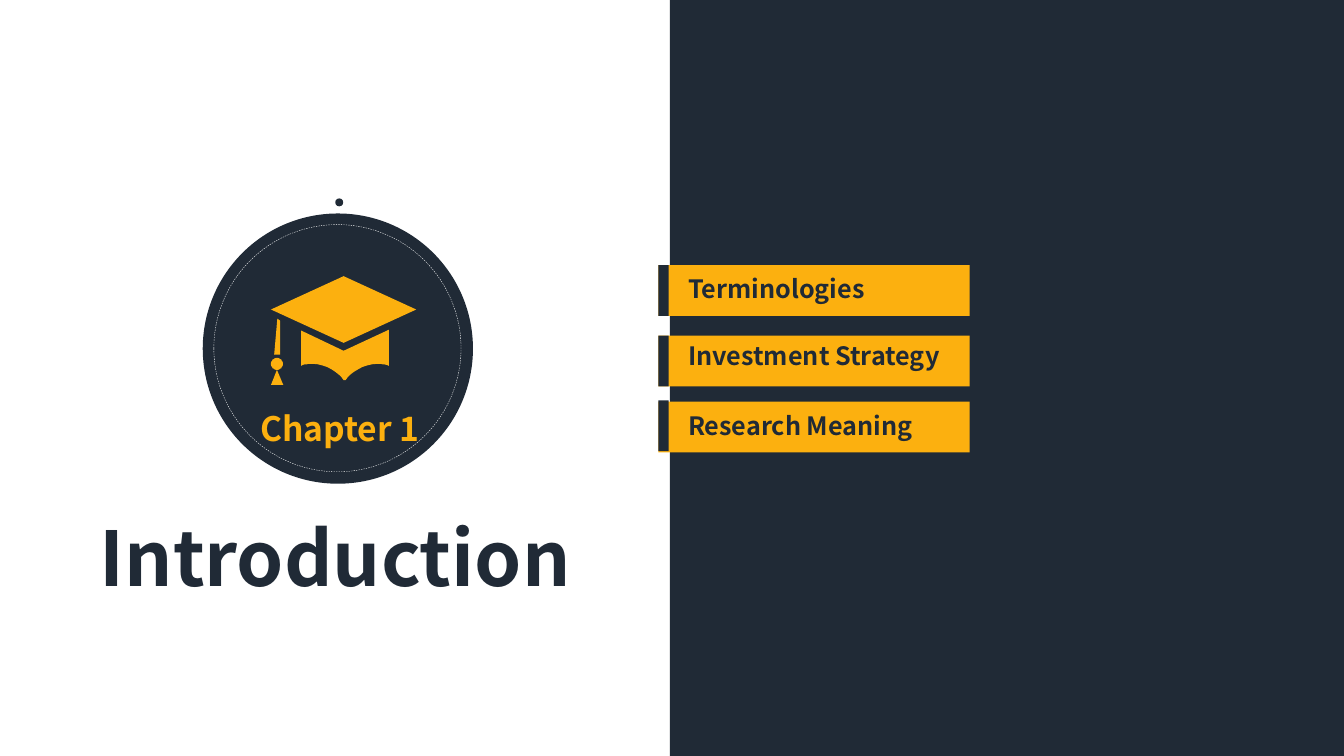
import math

from pptx import Presentation
from pptx import util as u
from pptx.dml.color import RGBColor
from pptx.enum import dml, shapes, text

NAVY = RGBColor(0x20, 0x2A, 0x36)
AMBER = RGBColor(0xFC, 0xB0, 0x0F)
WHITE = RGBColor(0xFF, 0xFF, 0xFF)
FONT = "Noto Sans CJK SC"

# All lengths are in centimetres.
TITLE = "Introduction"
CHAPTER = "Chapter 1"
# wording, bar top, tab top, text top, text width
TOPICS = [
    ("Terminologies", 6.68, 6.68, 6.76, 5.08),
    ("Investment Strategy", 8.46, 8.46, 8.46, 7.06),
    ("Research Meaning", 10.12, 10.09, 10.21, 6.43),
]
TAB_LEFT, TAB_WIDTH, BAR_WIDTH, BAR_HEIGHT = 16.59, 0.26, 7.85, 1.28

# Graduation cap
BOARD = [(8.66, 6.96), (6.83, 7.80), (8.66, 8.64), (10.49, 7.80)]
CORD = [(6.99, 8.03), (6.91, 8.94), (7.06, 8.94), (7.06, 8.08)]
TASSEL = [(6.98, 9.32), (6.83, 9.70), (7.14, 9.70)]
KNOB_CENTRE, KNOB_RADIUS = (6.98, 9.17), 0.15
BASE_TOP = [(9.80, 8.31), (8.66, 8.84), (7.59, 8.33)]
BASE_CURVES = [
    [(7.59, 9.22), (7.67, 9.17), (7.77, 9.17), (7.90, 9.17)],
    [(7.90, 9.17), (8.20, 9.17), (8.56, 9.40), (8.66, 9.58)],
    [(8.71, 9.58), (8.81, 9.40), (9.17, 9.17), (9.50, 9.17)],
    [(9.50, 9.17), (9.58, 9.17), (9.70, 9.17), (9.80, 9.22)],
]


def place(left, top, width, height):
    return [u.Cm(value) for value in (left, top, width, height)]


def add_shape(page, kind, area, fill=None):
    shape = page.shapes.add_shape(kind, *place(*area))
    shape.shadow.inherit = False
    shape.line.fill.background()
    if fill is None:
        shape.fill.background()
    else:
        shape.fill.solid()
        shape.fill.fore_color.rgb = fill
    return shape


def add_label(page, wording, area, size, color, align, wrap=False,
              anchor=text.MSO_ANCHOR.TOP):
    box = page.shapes.add_textbox(*place(*area))
    frame = box.text_frame
    frame.word_wrap = wrap
    frame.vertical_anchor = anchor
    para = frame.paragraphs[0]
    para.alignment = align
    span = para.add_run()
    span.text = wording
    span.font.name = FONT
    span.font.size = u.Pt(size)
    span.font.bold = True
    span.font.color.rgb = color


def curve_points(curve, steps=8):
    """Sample a cubic Bezier curve."""
    points = []
    for step in range(steps + 1):
        t = step / steps
        weights = ((1 - t) ** 3, 3 * t * (1 - t) ** 2, 3 * t * t * (1 - t), t ** 3)
        points.append(tuple(sum(w * p[axis] for w, p in zip(weights, curve))
                            for axis in (0, 1)))
    return points


def circle_points(centre, radius, steps=32):
    angles = [2 * math.pi * step / steps for step in range(steps)]
    return [(centre[0] + radius * math.cos(a), centre[1] + radius * math.sin(a))
            for a in angles]


def add_cap(page):
    base = BASE_TOP + [point for curve in BASE_CURVES for point in curve_points(curve)]
    outlines = [base, BOARD, CORD, circle_points(KNOB_CENTRE, KNOB_RADIUS), TASSEL]
    builder = None
    for outline in outlines:
        points = [(round(x * 100), round(y * 100)) for x, y in outline]
        if builder is None:
            builder = page.shapes.build_freeform(*points[0], scale=u.Cm(0.01))
        else:
            builder.move_to(*points[0])
        builder.add_line_segments(points[1:], close=True)
    cap = builder.convert_to_shape()
    cap.shadow.inherit = False
    cap.fill.solid()
    cap.fill.fore_color.rgb = AMBER
    cap.line.fill.background()


def main():
    deck = Presentation()
    deck.slide_width, deck.slide_height = u.Cm(33.87), u.Cm(19.05)
    page = deck.slides.add_slide(deck.slide_layouts[6])
    rect, oval = shapes.MSO_SHAPE.RECTANGLE, shapes.MSO_SHAPE.OVAL
    centre, left = text.PP_ALIGN.CENTER, text.PP_ALIGN.LEFT

    add_shape(page, rect, (16.88, 0, 16.99, 19.05), NAVY)
    for wording, bar_top, tab_top, text_top, text_width in TOPICS:
        add_shape(page, rect, (TAB_LEFT, bar_top, BAR_WIDTH, BAR_HEIGHT), AMBER)
        add_shape(page, rect, (TAB_LEFT, tab_top, TAB_WIDTH, BAR_HEIGHT), NAVY)
        add_label(page, wording, (17.09, text_top, text_width, 1.03), 18, NAVY, left)

    add_label(page, TITLE, (2.11, 12.75, 12.67, 2.57), 54, NAVY, centre)
    add_shape(page, oval, (5.11, 5.38, 6.81, 6.81), NAVY)
    add_shape(page, oval, (8.45, 5.0, 0.2, 0.2), NAVY)
    add_label(page, CHAPTER, (5.26, 10.13, 6.6, 1.32), 24, AMBER, centre,
              wrap=True, anchor=text.MSO_ANCHOR.MIDDLE)
    ring = add_shape(page, oval, (5.39, 5.66, 6.23, 6.23))
    ring.line.color.rgb = WHITE
    ring.line.width = u.Pt(0.25)
    ring.line.dash_style = dml.MSO_LINE.DASH
    add_cap(page)

    deck.save("out.pptx")


if __name__ == "__main__":
    main()
